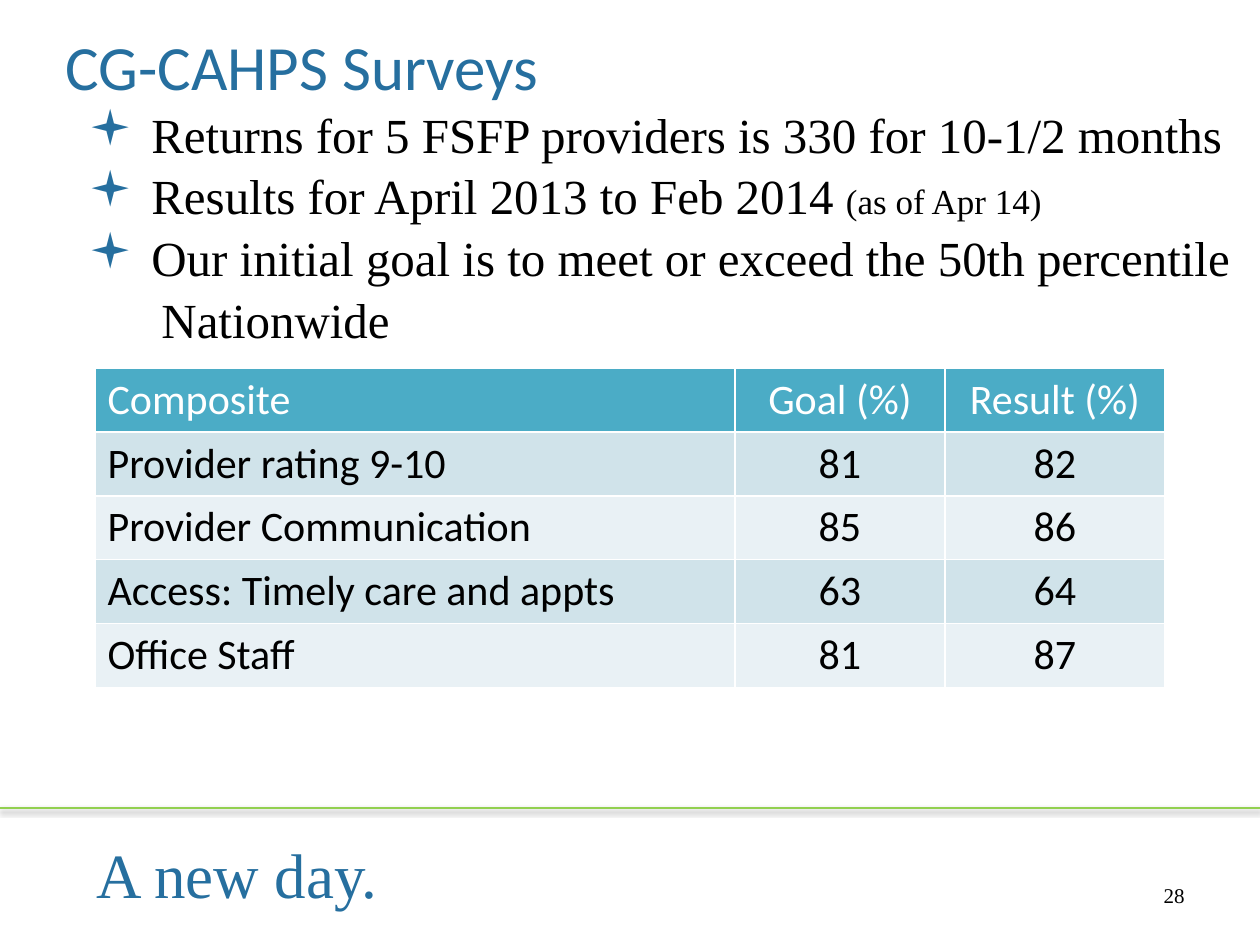
"""Build the CG-CAHPS survey results slide."""
from lxml import etree
from pptx import Presentation, util as u
from pptx.dml.color import RGBColor
from pptx.enum import shapes, text
from pptx.oxml import parse_xml
from pptx.oxml.ns import nsdecls, qn

PX = 914400 / 126
COLORS = {"blue": "266F9F", "green": "92D050", "black": "000000", "white": "FFFFFF",
          "header": "4BACC6", "odd": "D0E3EA", "even": "E9F1F5"}
SERIF, SANS = "Times New Roman", "Calibri"


def px(*lengths):
    return [u.Emu(round(length * PX)) for length in lengths]


def write(paragraph, wording, size, face, color, align=text.PP_ALIGN.LEFT):
    run = paragraph.add_run()
    run.text = wording
    paragraph.alignment = align
    for name, value in {"size": u.Pt(size), "name": face, "bold": False}.items():
        setattr(run.font, name, value)
    run.font.color.rgb = RGBColor.from_string(COLORS[color])


deck = Presentation()
deck.slide_width, deck.slide_height = px(1260, 945)
slide = deck.slides.add_slide(deck.slide_layouts[5])

divider = slide.shapes.add_connector(shapes.MSO_CONNECTOR.STRAIGHT, *px(0, 808, 1260, 808))
divider.line.color.rgb = RGBColor.from_string(COLORS["green"])
divider.line.width = u.Pt(1.5)
divider._element.spPr.append(parse_xml(
    f'<a:effectLst {nsdecls("a")}><a:outerShdw blurRad="39370" dist="20320" dir="5400000" rotWithShape="0">'
    f'<a:srgbClr val="{COLORS["black"]}"><a:alpha val="38000"/></a:srgbClr></a:outerShdw></a:effectLst>'))

heading = slide.shapes.title
heading.left, heading.top, heading.width, heading.height = px(53, 21, 505, 90)
slogan = slide.shapes.add_textbox(*px(84, 829, 310, 100))
findings = slide.shapes.add_textbox(*px(76, 95, 1178, 250))
page = slide.shapes.add_textbox(*px(903, 876, 294, 50))
for box, wrap in ((heading, False), (slogan, False), (findings, False), (page, True)):
    frame_format = {"word_wrap": wrap, "auto_size": text.MSO_AUTO_SIZE.NONE,
                    "vertical_anchor": text.MSO_ANCHOR.TOP}
    for name, value in frame_format.items():
        setattr(box.text_frame, name, value)

write(heading.text_frame.paragraphs[0], "CG-CAHPS Surveys", 36, SANS, "blue")
write(slogan.text_frame.paragraphs[0], "A new day.", 36, SERIF, "blue")
write(page.text_frame.paragraphs[0], "28", 12, SERIF, "black", text.PP_ALIGN.RIGHT)

points = [
    (True, [("Returns for 5 FSFP providers is 330 for 10-1/2 months", 28)]),
    (True, [("Results for April 2013 to Feb 2014 ", 28), ("(as of Apr 14)", 20)]),
    (True, [("Our initial goal is to meet or exceed the 50th percentile", 28)]),
    (False, [("Nationwide", 28)]),
]
for index, (bulleted, pieces) in enumerate(points):
    body = findings.text_frame
    point = body.add_paragraph() if index else body.paragraphs[0]
    point.line_spacing = 1.05
    for wording, size in pieces:
        write(point, wording, size, SERIF, "black")
    props = point._p.get_or_add_pPr()
    margin, indent = px(63, -63) if bulleted else px(73, 0)
    props.set("marL", str(margin))
    props.set("indent", str(indent))
    if bulleted:
        bullet_color = etree.SubElement(props, qn("a:buClr"))
        etree.SubElement(bullet_color, qn("a:srgbClr"), val=COLORS["blue"])
        etree.SubElement(props, qn("a:buFont"), typeface="Wingdings")
        etree.SubElement(props, qn("a:buChar"), char="▪")

scores = [
    ("Composite", "Goal (%)", "Result (%)"),
    ("Provider rating 9-10", "81", "82"),
    ("Provider Communication", "85", "86"),
    ("Access: Timely care and appts", "63", "64"),
    ("Office Staff", "81", "87"),
]
results = slide.shapes.add_table(5, 3, *px(95, 368, 1070, 315)).table
for column, width in zip(results.columns, px(640, 210, 220)):
    column.width = width
for r, row in enumerate(scores):
    results.rows[r].height = px(63)[0]
    fill = "header" if r == 0 else "odd" if r % 2 else "even"
    for c, wording in enumerate(row):
        cell = results.cell(r, c)
        write(cell.text_frame.paragraphs[0], wording, 24, SANS, "black" if r else "white",
              text.PP_ALIGN.CENTER if c else text.PP_ALIGN.LEFT)
        cell_props = cell._tc.get_or_add_tcPr()
        for side in ("lnL", "lnR", "lnT", "lnB"):
            border = etree.SubElement(cell_props, qn(f"a:{side}"), w=str(u.Pt(1)))
            paint = etree.SubElement(border, qn("a:solidFill"))
            etree.SubElement(paint, qn("a:srgbClr"), val=COLORS["white"])
        cell.fill.solid()
        cell.fill.fore_color.rgb = RGBColor.from_string(COLORS[fill])

deck.save("out.pptx")
